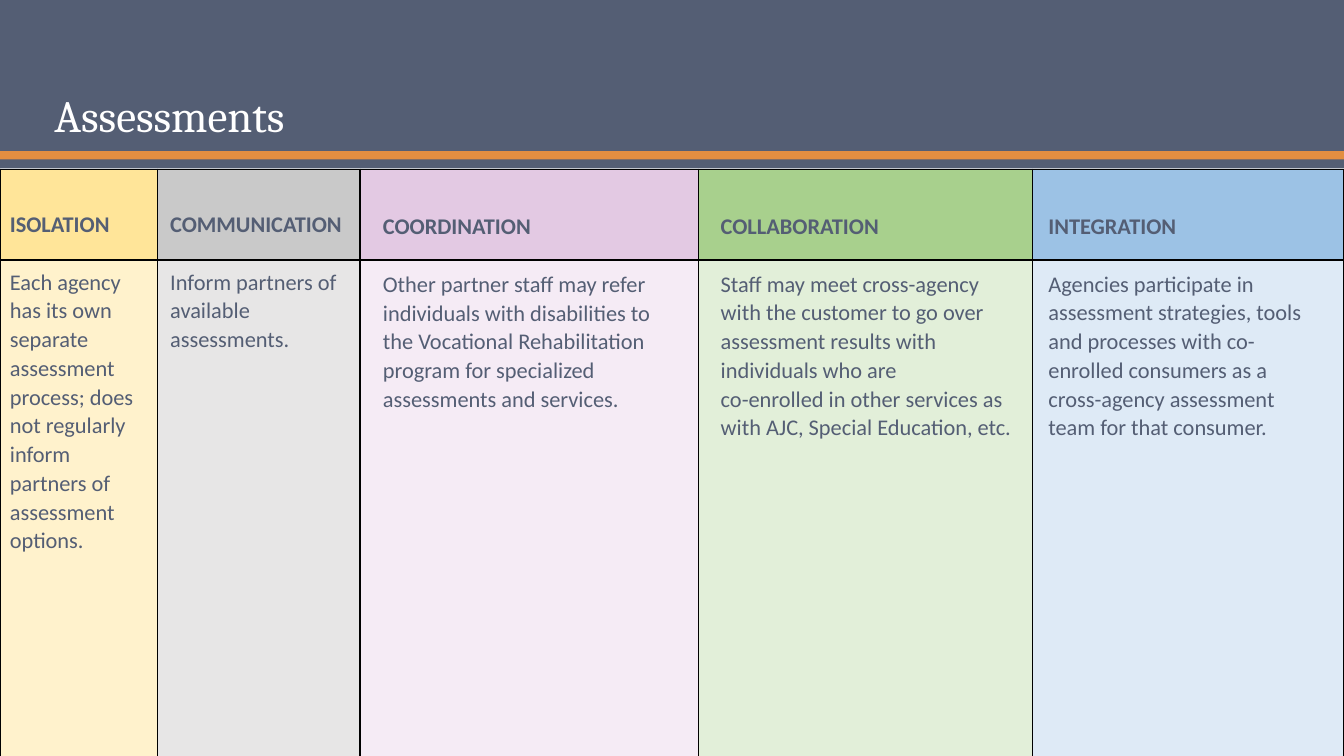
from dataclasses import dataclass

from lxml.etree import SubElement
from pptx import Presentation
from pptx.dml.color import RGBColor
from pptx.enum.shapes import MSO_SHAPE
from pptx.enum.text import MSO_ANCHOR, MSO_AUTO_SIZE
from pptx.oxml.ns import qn
from pptx.util import Inches, Pt

SLATE = RGBColor(0x54, 0x5E, 0x74)
ORANGE = RGBColor(0xE3, 0x8E, 0x41)
WHITE = RGBColor(0xFF, 0xFF, 0xFF)
BLACK = RGBColor(0x00, 0x00, 0x00)

HEADING_FORMAT = {"name": "Calibri", "size": Pt(16), "bold": True}
BODY_FORMAT = {**HEADING_FORMAT, "bold": False}
TITLE_FORMAT = {"name": "Cambria", "size": Pt(32), "bold": False}

SLIDE_WIDTH = 13.33
TABLE_TOP = 1.68
ROW_HEIGHTS = (0.9, 4.93)


@dataclass(frozen=True)
class Band:
    top: float
    height: float
    color: RGBColor


@dataclass(frozen=True)
class Stage:
    heading: str
    body: str
    column_width: float
    text_left: float
    text_top: float
    text_width: float
    text_height: float
    heading_fill: RGBColor
    body_fill: RGBColor


BANDS = (
    Band(0, 1.5, SLATE),
    Band(1.5, 0.09, ORANGE),
    Band(1.58, 0.09, SLATE),
)

STAGES = (
    Stage("ISOLATION",
          "Each agency has its own separate assessment process; does not "
          "regularly inform partners of assessment options.",
          1.56, 0, 2.02, 1.47, 4.31,
          RGBColor(0xFF, 0xE5, 0x99), RGBColor(0xFF, 0xF2, 0xCC)),
    Stage("COMMUNICATION",
          "Inform partners of available assessments.",
          2.01, 1.59, 2.02, 1.96, 4.31,
          RGBColor(0xC9, 0xC9, 0xC9), RGBColor(0xE7, 0xE6, 0xE6)),
    Stage("COORDINATION",
          "Other partner staff may refer individuals with disabilities to the "
          "Vocational Rehabilitation program for specialized assessments and "
          "services.",
          3.36, 3.7, 2.04, 3.1, 4.31,
          RGBColor(0xE3, 0xC9, 0xE3), RGBColor(0xF5, 0xEB, 0xF5)),
    Stage("COLLABORATION",
          "Staff may meet cross-agency with the customer to go over assessment "
          "results with individuals who are\n"
          "co-enrolled in other services as with AJC, Special Education, etc.",
          3.31, 7.05, 2.04, 3.11, 5.1,
          RGBColor(0xA8, 0xD0, 0x8D), RGBColor(0xE2, 0xEF, 0xD9)),
    Stage("INTEGRATION",
          "Agencies participate in assessment strategies, tools and processes "
          "with co-enrolled consumers as a cross-agency assessment team for "
          "that consumer.",
          3.09, 10.3, 2.04, 2.91, 5.1,
          RGBColor(0x9C, 0xC2, 0xE5), RGBColor(0xDE, 0xEA, 0xF6)),
)


def add_band(slide, band: Band) -> None:
    bar = slide.shapes.add_shape(MSO_SHAPE.RECTANGLE, 0, Inches(band.top),
                                 Inches(SLIDE_WIDTH), Inches(band.height))
    bar.shadow.inherit = False
    bar.fill.solid()
    bar.fill.fore_color.rgb = band.color
    bar.line.fill.background()


def add_frame(slide, left: float, top: float, width: float, height: float):
    frame = slide.shapes.add_textbox(Inches(left), Inches(top),
                                     Inches(width), Inches(height)).text_frame
    frame.word_wrap = True
    frame.auto_size = MSO_AUTO_SIZE.NONE
    return frame


def write(paragraph, text: str, font_format: dict, color: RGBColor,
          line_spacing: float) -> None:
    paragraph.text = text
    paragraph.line_spacing = line_spacing
    for run in paragraph.runs:
        for attribute, value in font_format.items():
            setattr(run.font, attribute, value)
        run.font.color.rgb = color


def style_cell(cell, color: RGBColor) -> None:
    properties = cell._tc.get_or_add_tcPr()
    for side in ("lnL", "lnR", "lnT", "lnB"):
        border = SubElement(properties, qn(f"a:{side}"), w=str(Pt(1)))
        line_fill = SubElement(border, qn("a:solidFill"))
        SubElement(line_fill, qn("a:srgbClr"), val=str(BLACK))
    cell.fill.solid()
    cell.fill.fore_color.rgb = color


def add_stage_table(slide) -> None:
    table = slide.shapes.add_table(
        len(ROW_HEIGHTS), len(STAGES), 0, Inches(TABLE_TOP),
        Inches(SLIDE_WIDTH), Inches(sum(ROW_HEIGHTS))).table
    table.first_row = table.horz_banding = False
    for row, height in zip(table.rows, ROW_HEIGHTS):
        row.height = Inches(height)
    for index, stage in enumerate(STAGES):
        table.columns[index].width = Inches(stage.column_width)
        style_cell(table.cell(0, index), stage.heading_fill)
        style_cell(table.cell(1, index), stage.body_fill)


def add_stage_text(slide, stage: Stage) -> None:
    frame = add_frame(slide, stage.text_left, stage.text_top,
                      stage.text_width, stage.text_height)
    write(frame.paragraphs[0], stage.heading, HEADING_FORMAT, SLATE, 1.07)
    body = frame.add_paragraph()
    write(body, stage.body, BODY_FORMAT, SLATE, 1.07)
    body.space_before = Pt(20.5)


def main() -> None:
    presentation = Presentation()
    presentation.slide_width = Inches(SLIDE_WIDTH)
    presentation.slide_height = Inches(7.5)
    slide = presentation.slides.add_slide(presentation.slide_layouts[6])

    # Header bands and title
    for band in BANDS:
        add_band(slide, band)
    title = add_frame(slide, 0.44, 0.33, 11.48, 1.13)
    title.vertical_anchor = MSO_ANCHOR.BOTTOM
    write(title.paragraphs[0], "Assessments", TITLE_FORMAT, WHITE, 0.9)

    # Coloured columns with their text on top
    add_stage_table(slide)
    for stage in STAGES:
        add_stage_text(slide, stage)

    presentation.save("out.pptx")


if __name__ == "__main__":
    main()
